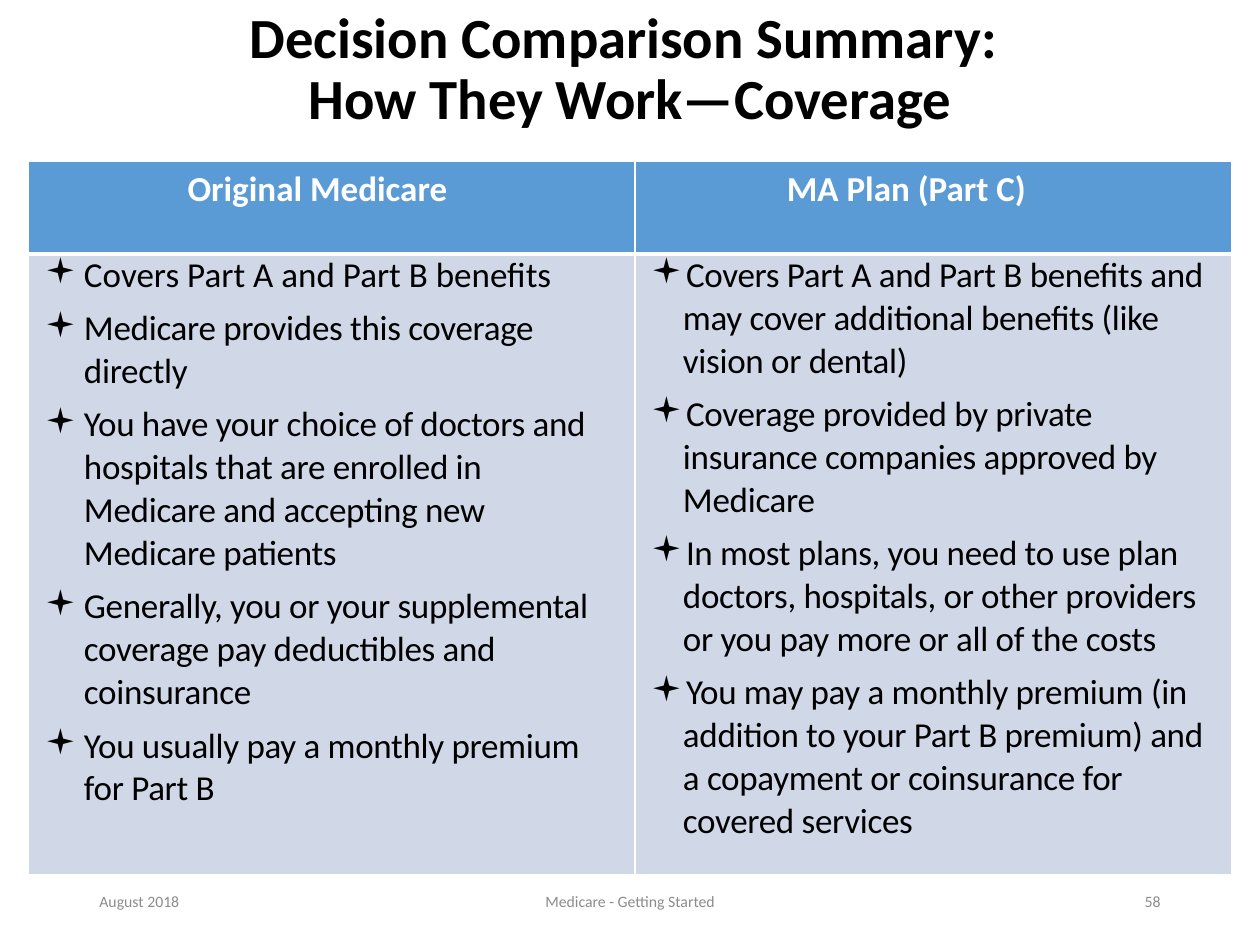
from copy import deepcopy
from dataclasses import dataclass

from lxml.etree import SubElement
from pptx import Presentation
from pptx.dml.color import RGBColor
from pptx.enum.text import MSO_ANCHOR as Anchor, MSO_AUTO_SIZE as AutoSize, PP_ALIGN as Align
from pptx.oxml.ns import qn
from pptx.util import Pt

EMU_PER_PX = 914400 / 126
FONT, BULLET_FONT = "Calibri", "Wingdings"
BLACK, WHITE, GREY = "000000", "FFFFFF", "8C8C8C"
HEADER_BLUE, BODY_BLUE = "5B9BD5", "D0D8E8"
HEADER_HEIGHT, BODY_HEIGHT = 93, 621


@dataclass
class Option:
    heading: str
    width: int
    heading_inset: int  # right inset that shifts the centred heading
    points_inset: int  # right inset of the bulleted points
    text_indent: int
    bullet_hang: int
    points: list[str]


@dataclass
class FooterItem:
    text: str
    left: int
    width: int
    align: Align


OPTIONS = [
    Option("Original Medicare", 607, 28, 30, 56, 39, [
        "Covers Part A and Part B benefits",
        "Medicare provides this coverage directly",
        "You have your choice of doctors and hospitals that are enrolled in "
        "Medicare and accepting new Medicare patients",
        "Generally, you or your supplemental coverage pay deductibles and coinsurance",
        "You usually pay a monthly premium for Part B",
    ]),
    Option("MA Plan (Part C)", 597, 54, 20, 48, 32, [
        "Covers Part A and Part B benefits and may cover additional benefits "
        "(like vision or dental)",
        "Coverage provided by private insurance companies approved by Medicare",
        "In most plans, you need to use plan doctors, hospitals, or other "
        "providers or you pay more or all of the costs",
        "You may pay a monthly premium (in addition to your Part B premium) and "
        "a copayment or coinsurance for covered services",
    ]),
]

FOOTER = [
    FooterItem("August 2018", 87, 284, Align.LEFT),
    FooterItem("Medicare - Getting Started", 417, 426, Align.CENTER),
    FooterItem("58", 889, 284, Align.RIGHT),
]


def px(length: int) -> int:
    return round(length * EMU_PER_PX)


def rgb(value: str) -> RGBColor:
    return RGBColor.from_string(value)


def format_runs(paragraph, size: float, color: str, bold: bool = False) -> None:
    for run in paragraph.runs:
        run.font.name = FONT
        run.font.size = Pt(size)
        run.font.bold = bold
        run.font.color.rgb = rgb(color)


def add_bullet(paragraph, indent: int, hang: int) -> None:
    properties = paragraph._p.get_or_add_pPr()
    properties.set("marL", str(px(indent)))
    properties.set("indent", str(-px(hang)))
    SubElement(properties, qn("a:buFont"), typeface=BULLET_FONT)
    SubElement(properties, qn("a:buChar"), char="▪")


def style_cell(cell, fill: str, top: int, bottom: int) -> None:
    cell.margin_left = cell.margin_right = cell.margin_top = cell.margin_bottom = 0
    properties = cell._tc.get_or_add_tcPr()
    for side, width in (("L", 1), ("R", 1), ("T", top), ("B", bottom)):
        border = SubElement(properties, qn(f"a:ln{side}"), w=str(Pt(width)))
        SubElement(SubElement(border, qn("a:solidFill")), qn("a:srgbClr"), val=WHITE)
    cell.fill.solid()
    cell.fill.fore_color.rgb = rgb(fill)


def fill_heading(cell, option: Option) -> None:
    style_cell(cell, HEADER_BLUE, top=1, bottom=3)
    cell.margin_right = px(option.heading_inset)
    cell.margin_top = px(1)
    cell.text_frame.text = option.heading
    heading = cell.text_frame.paragraphs[0]
    heading.alignment = Align.CENTER
    heading.line_spacing = 1.15
    format_runs(heading, 20, WHITE, bold=True)


def fill_points(cell, option: Option) -> None:
    style_cell(cell, BODY_BLUE, top=3, bottom=1)
    cell.margin_right = px(option.points_inset)
    cell.text_frame.text = "\n".join(option.points)
    for index, point in enumerate(cell.text_frame.paragraphs):
        if index:
            point.space_before = Pt(6)
        add_bullet(point, option.text_indent, option.bullet_hang)
        format_runs(point, 20, BLACK)
        # Every point but the very first is set slightly tighter
        if index or option is not OPTIONS[0]:
            point.runs[0].font._element.set("spc", "-20")


def set_title(title) -> None:
    title.left, title.top, title.width, title.height = px(87), 0, px(1086), px(141)
    frame = title.text_frame
    frame.text = "Decision Comparison Summary: \vHow They Work—Coverage"
    frame.auto_size = AutoSize.NONE
    frame.vertical_anchor = Anchor.MIDDLE
    heading = frame.paragraphs[0]
    heading.alignment = Align.CENTER
    heading.line_spacing = 0.9
    format_runs(heading, 32.4, BLACK, bold=True)
    # The line break takes the size of the text around it
    line_break = heading._p.find(qn("a:br"))
    line_break.append(deepcopy(heading.runs[0].font._element))


def add_comparison(slide) -> None:
    total_width = sum(option.width for option in OPTIONS)
    table = slide.shapes.add_table(
        2, len(OPTIONS), px(28), px(161), px(total_width), px(HEADER_HEIGHT + BODY_HEIGHT)
    ).table
    table.rows[0].height, table.rows[1].height = px(HEADER_HEIGHT), px(BODY_HEIGHT)
    for index, option in enumerate(OPTIONS):
        table.columns[index].width = px(option.width)
        fill_heading(table.cell(0, index), option)
        fill_points(table.cell(1, index), option)


def add_footer_item(slide, item: FooterItem) -> None:
    box = slide.shapes.add_textbox(px(item.left), px(876), px(item.width), px(50))
    frame = box.text_frame
    frame.word_wrap = True
    frame.vertical_anchor = Anchor.MIDDLE
    frame.text = item.text
    frame.paragraphs[0].alignment = item.align
    format_runs(frame.paragraphs[0], 9, GREY)


def main() -> None:
    deck = Presentation()
    deck.slide_width, deck.slide_height = px(1260), px(945)
    slide = deck.slides.add_slide(deck.slide_layouts[5])  # title only

    # Title
    set_title(slide.shapes.title)

    # Comparison table
    add_comparison(slide)

    # Footer
    for item in FOOTER:
        add_footer_item(slide, item)

    deck.save("out.pptx")


if __name__ == "__main__":
    main()
